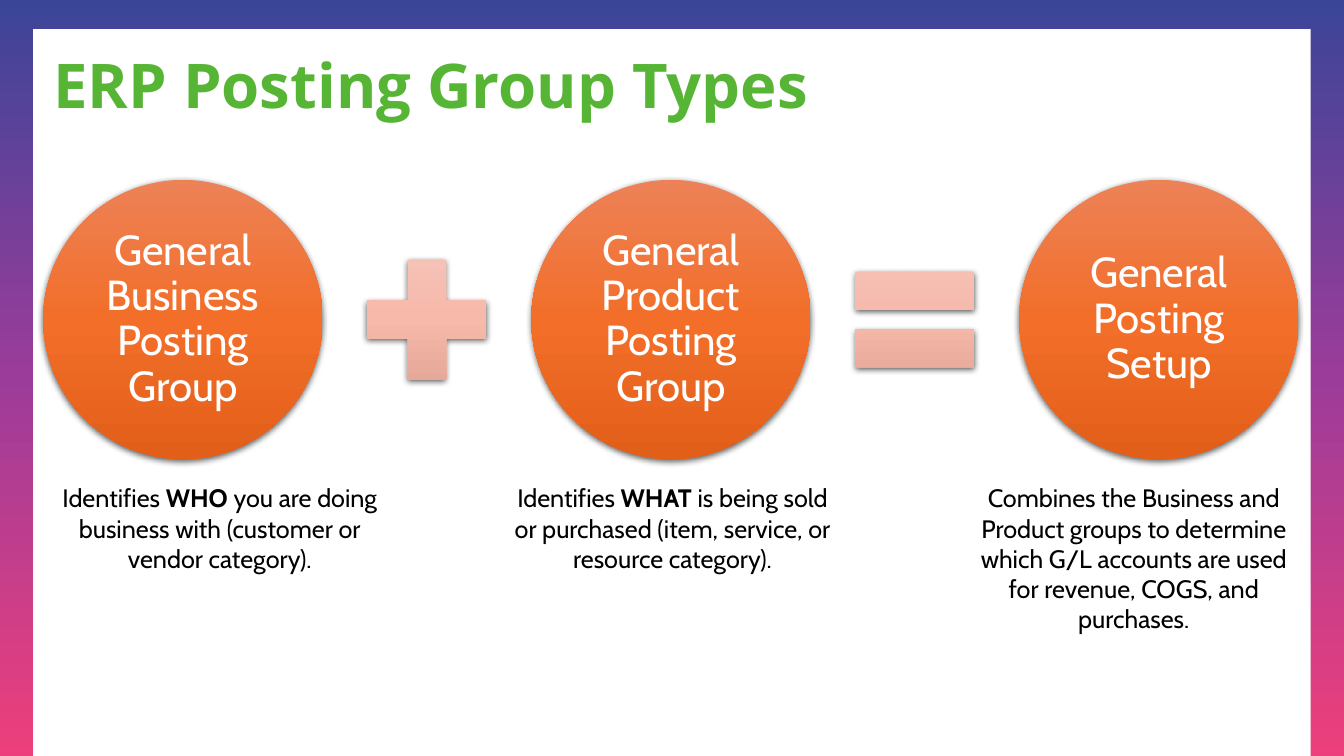
from copy import deepcopy
from dataclasses import dataclass

from pptx import Presentation
from pptx.dml.color import RGBColor
from pptx.enum.shapes import MSO_SHAPE as Shape
from pptx.enum.text import MSO_ANCHOR as Anchor, PP_ALIGN as Align
from pptx.oxml import parse_xml
from pptx.oxml.ns import nsdecls, qn
from pptx.shapes.autoshape import Shape as AutoShape
from pptx.slide import Slide
from pptx.text.text import _Run as Run
from pptx.util import Inches, Pt


@dataclass(frozen=True)
class Theme:
    frame: tuple[str, ...] = ("3B4598", "9C3C9A", "ED3F7B")
    circle: tuple[str, ...] = ("ED8257", "F26E29", "E25F1A")
    operator: tuple[str, ...] = ("F5C5BA", "F6B9AA", "DFA292")
    paper: str = "FFFFFF"
    title: str = "57B535"
    body: str = "000000"
    title_font: str = "Open Sans"
    body_font: str = "Cabin"
    title_size: int = 44
    circle_size: int = 30
    body_size: int = 18


@dataclass(frozen=True)
class Term:
    """A part of the equation: a labelled circle or an operator sign."""
    kind: Shape
    size: float
    colors: tuple[str, ...]
    label: str = ""


@dataclass(frozen=True)
class Caption:
    left: float
    width: float
    height: float
    pieces: tuple[str, ...]
    strong: str = ""


THEME = Theme()
GROUP = (Shape.OVAL, 2.77, THEME.circle)
SIGN_SIZE = 1.61
EQUATION_LEFT, EQUATION_MIDDLE, EQUATION_GAP = 0.43, 3.17, 0.23
CAPTION_TOP = 4.74

EQUATION = (
    Term(*GROUP, "General Business Posting Group"),
    Term(Shape.MATH_PLUS, SIGN_SIZE, THEME.operator),
    Term(*GROUP, "General Product Posting Group"),
    Term(Shape.MATH_EQUAL, SIGN_SIZE, THEME.operator),
    Term(*GROUP, "General Posting Setup"),
)
CAPTIONS = (
    Caption(0.45, 3.46, 1.01, (
        "Identifies ", "WHO",
        " you are doing business with (customer or vendor category)."), "WHO"),
    Caption(4.94, 3.46, 1.01, (
        "Identifies ", "WHAT",
        " is being sold or purchased (item, service, or resource category)."), "WHAT"),
    Caption(9.61, 3.27, 1.92, (
        "Combines the Business and Product groups to determine which G/L "
        "accounts are used for revenue, COGS, and purchases.",)),
)


def add_plain(slide: Slide, kind: Shape, left: float, top: float,
              width: float, height: float) -> AutoShape:
    """Add a preset shape without outline or shadow."""
    plain = slide.shapes.add_shape(
        kind, Inches(left), Inches(top), Inches(width), Inches(height))
    plain.line.fill.background()
    plain.shadow.inherit = False
    return plain


def fill_gradient(target: AutoShape, colors: tuple[str, ...]) -> None:
    """Fill from top to bottom with evenly spaced colours."""
    target.fill.gradient()
    target.fill.gradient_angle = 270
    stops = target._element.spPr.find(".//" + qn("a:gsLst"))
    while len(stops) < len(colors):
        stops.append(deepcopy(stops[-1]))
    for index, (stop, color) in enumerate(zip(target.fill.gradient_stops, colors)):
        stop.position = index / (len(colors) - 1)
        stop.color.rgb = RGBColor.from_string(color)


def add_soft_shadow(target: AutoShape) -> None:
    target._element.spPr.find(qn("a:effectLst")).append(parse_xml(
        f'<a:outerShdw {nsdecls("a")} blurRad="{Pt(4.5)}" dist="{Pt(1.5)}" '
        'dir="5400000" algn="ctr" rotWithShape="0"><a:srgbClr val="000000">'
        '<a:alpha val="63000"/></a:srgbClr></a:outerShdw>'))


def style_run(run: Run, font: str, size: int, color: str, bold: bool = False) -> None:
    run.font.name = font
    run.font.size = Pt(size)
    run.font.bold = bold
    run.font.color.rgb = RGBColor.from_string(color)


def draw_frame(slide: Slide) -> None:
    border = add_plain(slide, Shape.RECTANGLE, 0, 0, 13.33, 7.5)
    fill_gradient(border, THEME.frame)
    paper = add_plain(slide, Shape.RECTANGLE, 0.33, 0.29, 12.67, 7.21)
    paper.fill.solid()
    paper.fill.fore_color.rgb = RGBColor.from_string(THEME.paper)


def draw_title(slide: Slide) -> None:
    frame = slide.shapes.add_textbox(
        Inches(0.43), Inches(0.4), Inches(12.45), Inches(0.96)).text_frame
    frame.word_wrap = True
    frame.vertical_anchor = Anchor.MIDDLE
    frame.text = "ERP Posting Group Types"
    heading = frame.paragraphs[0]
    heading.line_spacing = 0.9
    style_run(heading.runs[0], THEME.title_font, THEME.title_size, THEME.title, True)


def draw_term(slide: Slide, term: Term, left: float) -> None:
    top = EQUATION_MIDDLE - term.size / 2
    symbol = add_plain(slide, term.kind, left, top, term.size, term.size)
    fill_gradient(symbol, term.colors)
    add_soft_shadow(symbol)
    if not term.label:
        return
    frame = symbol.text_frame
    frame.word_wrap = True
    frame.vertical_anchor = Anchor.MIDDLE
    frame.margin_left = frame.margin_right = Inches(0.04)
    frame.margin_top = frame.margin_bottom = Inches(0.04)
    frame.text = term.label
    label = frame.paragraphs[0]
    label.alignment = Align.CENTER
    label.line_spacing = 0.9
    style_run(label.runs[0], THEME.body_font, THEME.circle_size, THEME.paper)


def draw_caption(slide: Slide, caption: Caption) -> None:
    frame = slide.shapes.add_textbox(
        Inches(caption.left), Inches(CAPTION_TOP),
        Inches(caption.width), Inches(caption.height)).text_frame
    frame.word_wrap = True
    sentence = frame.paragraphs[0]
    sentence.alignment = Align.CENTER
    for piece in caption.pieces:
        run = sentence.add_run()
        run.text = piece
        style_run(run, THEME.body_font, THEME.body_size, THEME.body,
                  piece == caption.strong)


def main() -> None:
    deck = Presentation()
    deck.slide_width, deck.slide_height = Inches(13.33), Inches(7.5)
    slide = deck.slides.add_slide(deck.slide_layouts[6])
    draw_frame(slide)
    draw_title(slide)
    left = EQUATION_LEFT
    for term in EQUATION:
        draw_term(slide, term, left)
        left += term.size + EQUATION_GAP
    for caption in CAPTIONS:
        draw_caption(slide, caption)
    deck.save("out.pptx")


if __name__ == "__main__":
    main()
